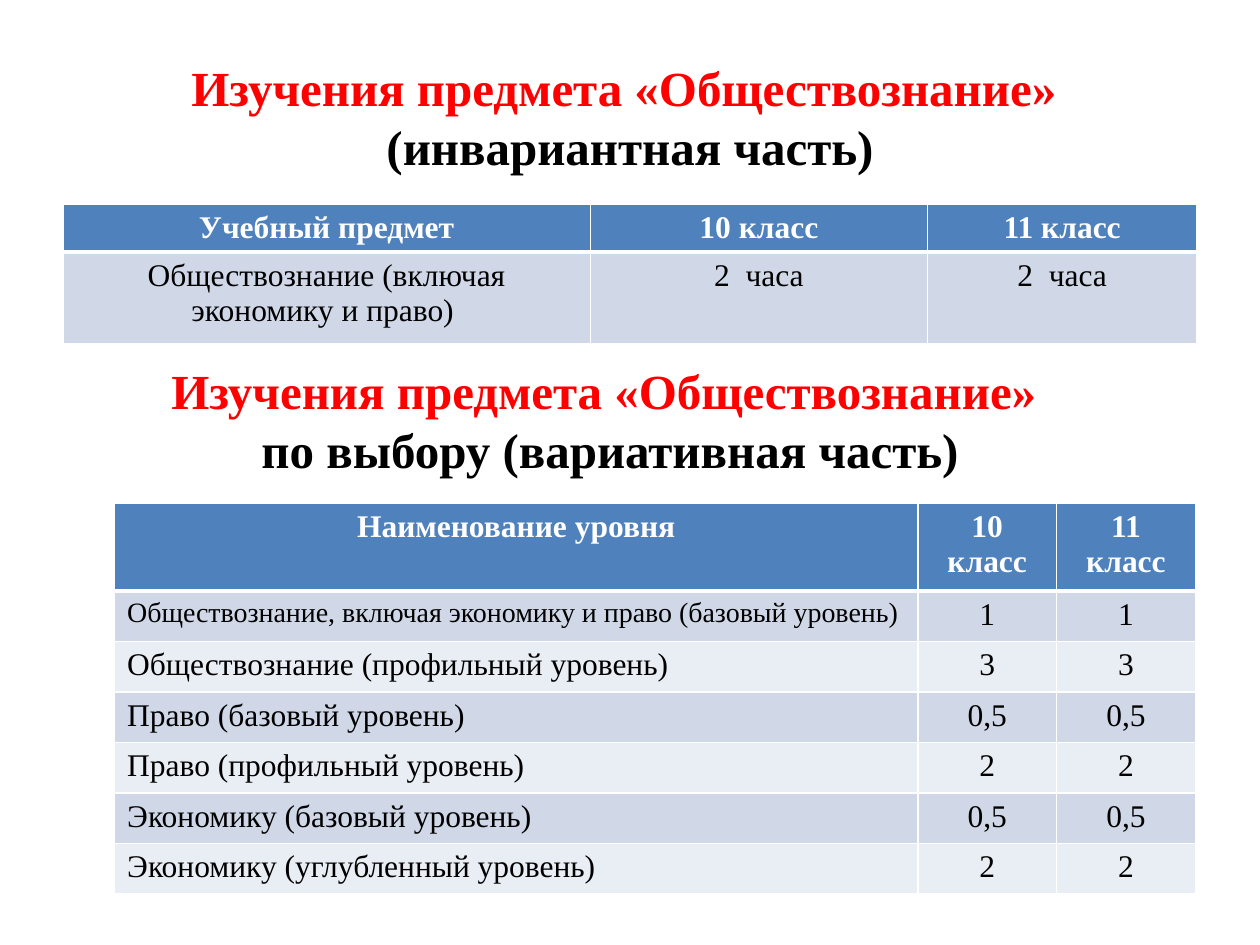
import pptx
import pptx.dml.color
import pptx.enum.text
import pptx.oxml
import pptx.oxml.ns
import pptx.util

Pt = pptx.util.Pt
RGBColor = pptx.dml.color.RGBColor
ALIGN = pptx.enum.text.PP_ALIGN
ANCHOR = pptx.enum.text.MSO_ANCHOR

RED = RGBColor(0xFF, 0x00, 0x00)
BLACK = RGBColor(0x00, 0x00, 0x00)
WHITE = RGBColor(0xFF, 0xFF, 0xFF)
HEADER_BLUE = RGBColor(0x4F, 0x81, 0xBD)
BANDS = (RGBColor(0xD0, 0xD8, 0xE8), RGBColor(0xE9, 0xED, 0xF4))


class SlideBuilder:
    font_name = "Times New Roman"
    heading_size = 28
    cell_size = 18

    def __init__(self, slide):
        self.slide = slide

    def add_run(self, paragraph, text, size, color, bold=False):
        run = paragraph.add_run()
        run.text = text
        run.font.name = self.font_name
        run.font.size = Pt(size)
        run.font.bold = bold
        run.font.color.rgb = color

    def title(self, box, first_line, second_line):
        shape = self.slide.shapes.title
        shape.left, shape.top, shape.width, shape.height = map(Pt, box)
        frame = shape.text_frame
        frame.auto_size = pptx.enum.text.MSO_AUTO_SIZE.NONE
        frame.vertical_anchor = ANCHOR.MIDDLE
        paragraph = frame.paragraphs[0]
        paragraph.alignment = ALIGN.CENTER
        self.add_run(paragraph, first_line, self.heading_size, RED, True)
        paragraph.add_line_break()
        self.add_run(paragraph, second_line, self.heading_size, BLACK, True)

    def heading(self, box, first_line, second_line):
        frame = self.slide.shapes.add_textbox(*map(Pt, box)).text_frame
        frame.word_wrap = True
        lines = ((first_line, RED), (second_line, BLACK))
        for index, (text, color) in enumerate(lines):
            paragraph = frame.add_paragraph() if index else frame.paragraphs[0]
            paragraph.alignment = ALIGN.CENTER
            self.add_run(paragraph, text, self.heading_size, color, True)

    def cell_borders(self, cell, row):
        # The line between the header and the body is thicker
        widths = {"L": 1, "R": 1, "T": 3 if row == 1 else 1, "B": 3 if row == 0 else 1}
        properties = cell._tc.get_or_add_tcPr()
        for side, width in widths.items():
            properties.append(pptx.oxml.parse_xml(
                f'<a:ln{side} {pptx.oxml.ns.nsdecls("a")} w="{Pt(width)}">'
                f'<a:solidFill><a:srgbClr val="{WHITE}"/></a:solidFill></a:ln{side}>'))

    def table(self, left, top, column_widths, row_heights, rows,
              label_align=ALIGN.CENTER, sizes=None):
        table = self.slide.shapes.add_table(
            len(rows), len(column_widths), Pt(left), Pt(top),
            Pt(sum(column_widths)), Pt(sum(row_heights))).table
        for column, width in zip(table.columns, column_widths):
            column.width = Pt(width)
        for row, (height, texts) in enumerate(zip(row_heights, rows)):
            table.rows[row].height = Pt(height)
            header = row == 0
            for column, text in enumerate(texts):
                cell = table.cell(row, column)
                self.cell_borders(cell, row)
                cell.fill.solid()
                cell.fill.fore_color.rgb = HEADER_BLUE if header else BANDS[(row - 1) % 2]
                paragraph = cell.text_frame.paragraphs[0]
                is_label = column == 0 and not header
                paragraph.alignment = label_align if is_label else ALIGN.CENTER
                size = (sizes or {}).get((row, column), self.cell_size)
                self.add_run(paragraph, text, size, WHITE if header else BLACK, header)


def main():
    presentation = pptx.Presentation()
    presentation.slide_width, presentation.slide_height = Pt(720), Pt(540)
    slide = presentation.slides.add_slide(presentation.slide_layouts[5])
    builder = SlideBuilder(slide)
    subject = "Изучения предмета «Обществознание» "

    # Compulsory part
    builder.title((36, 21.6, 648, 90), subject, "(инвариантная часть)")
    builder.table(36, 116.8, (301.3, 192.7, 154), (26.6, 52.6), (
        ("Учебный предмет", "10 класс", "11 класс"),
        ("Обществознание (включая экономику и право) ", "2  часа", "2  часа"),
    ))

    # Elective part
    builder.heading((25.2, 202.3, 646.6, 75), subject, "по выбору (вариативная часть)")
    levels = (
        ("Обществознание, включая экономику и право (базовый уровень)", "1"),
        ("Обществознание (профильный уровень)", "3"),
        ("Право (базовый уровень)", "0,5"),
        ("Право (профильный уровень)", "2"),
        ("Экономику (базовый уровень)", "0,5"),
        ("Экономику (углубленный уровень)", "2"),
    )
    rows = [("Наименование уровня", "10 класс", "11 класс")]
    rows += [(level, hours, hours) for level, hours in levels]
    builder.table(65.5, 287.3, (459, 79.3, 79.3), [50] + [28.8] * len(levels), rows,
                  label_align=ALIGN.LEFT, sizes={(1, 0): 16})

    presentation.save("out.pptx")


if __name__ == "__main__":
    main()
